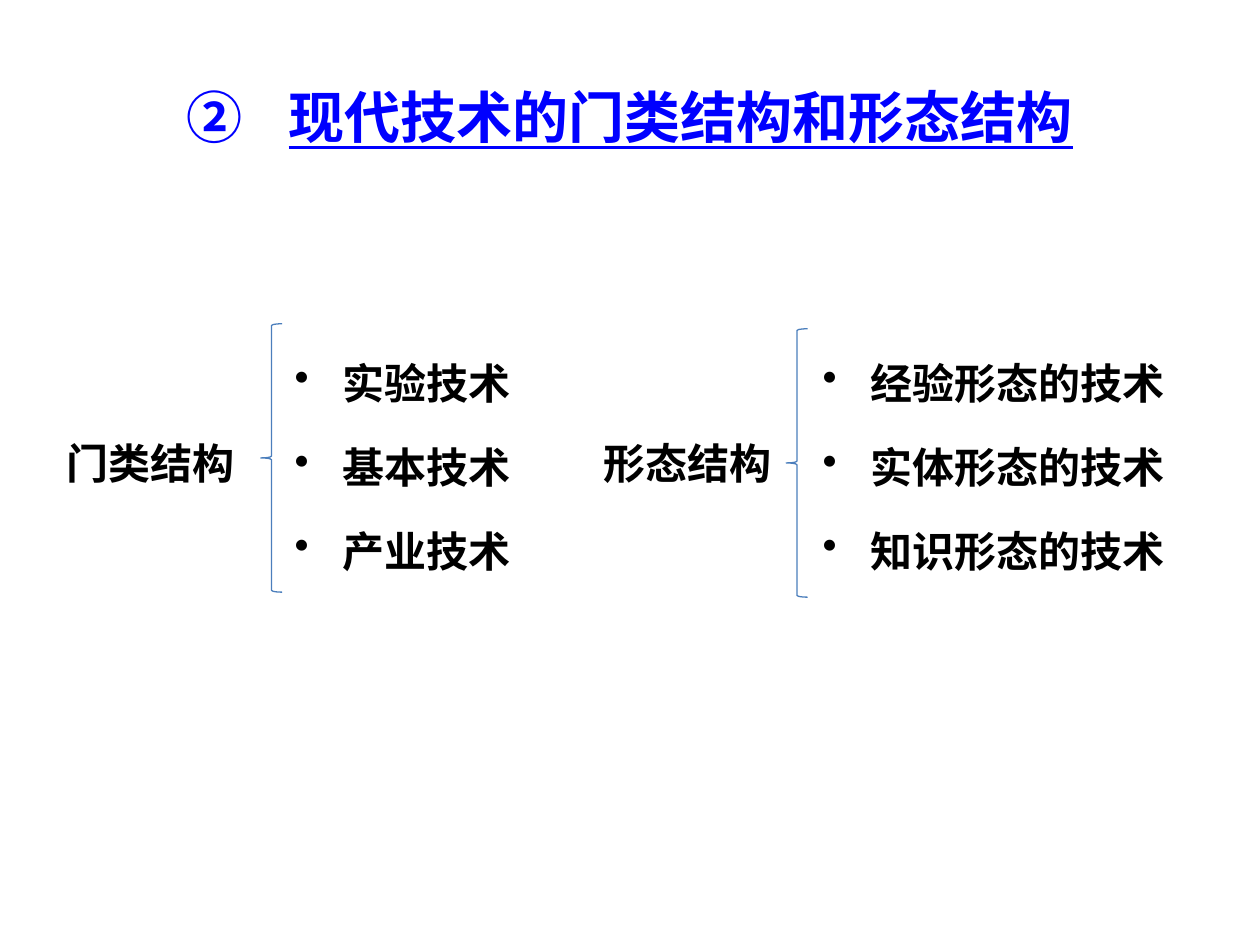
from lxml.etree import SubElement
from pptx import Presentation
from pptx.dml.color import RGBColor
from pptx.enum.shapes import MSO_SHAPE as Shape
from pptx.enum.text import MSO_ANCHOR as Anchor, MSO_AUTO_SIZE as AutoSize, PP_ALIGN as Align
from pptx.oxml.ns import qn
from pptx.util import Inches, Pt

BLUE = RGBColor(0x00, 0x00, 0xFF)
BLACK = RGBColor(0x00, 0x00, 0x00)
BRACE_BLUE = RGBColor(0x4B, 0x7E, 0xBC)

TITLE_FONT = {"name": "Calibri", "size": Pt(32), "bold": True, "underline": True}
BODY_FONT = {"name": "Calibri", "size": Pt(24), "bold": True}

LABEL_WIDTH, LABEL_HEIGHT = 1.56, 0.5
BRACE_WIDTH, BRACE_HEIGHT = 0.17, 2.13
LABEL_DROP = 0.83  # from the top of a list to its label

# Each group: box (left, top, width, height), brace offset, list left offset
GROUPS = [
    ("门类结构", ["实验技术", "基本技术", "产业技术"],
     (0.43, 2.59, 4.03, 2.16), (1.64, -0.02), 1.81),
    ("形态结构", ["经验形态的技术", "实体形态的技术", "知识形态的技术"],
     (4.69, 2.59, 4.88, 2.42), (1.55, 0.02), 1.74),
]


def add_text_box(slide, left, top, width, height, wrap=True):
    box = slide.shapes.add_textbox(*map(Inches, (left, top, width, height)))
    box.text_frame.word_wrap = wrap
    return box.text_frame


def set_bullet(paragraph, indent, tag, **attributes):
    properties = paragraph._p.get_or_add_pPr()
    properties.set("marL", str(Inches(indent)))
    properties.set("indent", str(-Inches(indent)))
    SubElement(properties, qn(tag), attributes)


def write(paragraph, text, style, color):
    run = paragraph.add_run()
    run.text = text
    for name, value in style.items():
        setattr(run.font, name, value)
    run.font.color.rgb = color


def add_title(slide, box, text, number):
    frame = add_text_box(slide, *box)
    frame.vertical_anchor = Anchor.MIDDLE
    paragraph = frame.paragraphs[0]
    paragraph.alignment = Align.CENTER
    set_bullet(paragraph, 0.81, "a:buAutoNum", type="circleNumDbPlain", startAt=str(number))
    write(paragraph, text, TITLE_FONT, BLUE)


def add_group(slide, label, items, box, brace_offset, list_offset):
    left, top, width, height = box

    # Bulleted list
    frame = add_text_box(slide, left + list_offset, top, width - list_offset, height)
    for index, item in enumerate(items):
        paragraph = frame.add_paragraph() if index else frame.paragraphs[0]
        set_bullet(paragraph, 0.38, "a:buChar", char="•")
        paragraph.line_spacing = 1.5
        paragraph.space_before = Pt(4.8 if index else 0)
        write(paragraph, item, BODY_FONT, BLACK)

    # Label
    frame = add_text_box(slide, left, top + LABEL_DROP, LABEL_WIDTH, LABEL_HEIGHT, wrap=False)
    frame.auto_size = AutoSize.SHAPE_TO_FIT_TEXT
    write(frame.paragraphs[0], label, BODY_FONT, BLACK)

    # Brace
    across, down = brace_offset
    brace = slide.shapes.add_shape(
        Shape.LEFT_BRACE, Inches(left + across), Inches(top + down),
        Inches(BRACE_WIDTH), Inches(BRACE_HEIGHT))
    brace.shadow.inherit = False
    brace.fill.background()
    brace.line.color.rgb = BRACE_BLUE
    brace.line.width = Pt(0.75)


def main():
    presentation = Presentation()
    presentation.slide_width, presentation.slide_height = Inches(10), Inches(7.5)
    slide = presentation.slides.add_slide(presentation.slide_layouts[6])
    add_title(slide, (0.5, 0.3, 9, 1.25), "现代技术的门类结构和形态结构", 2)
    for group in GROUPS:
        add_group(slide, *group)
    presentation.save("out.pptx")


if __name__ == "__main__":
    main()
